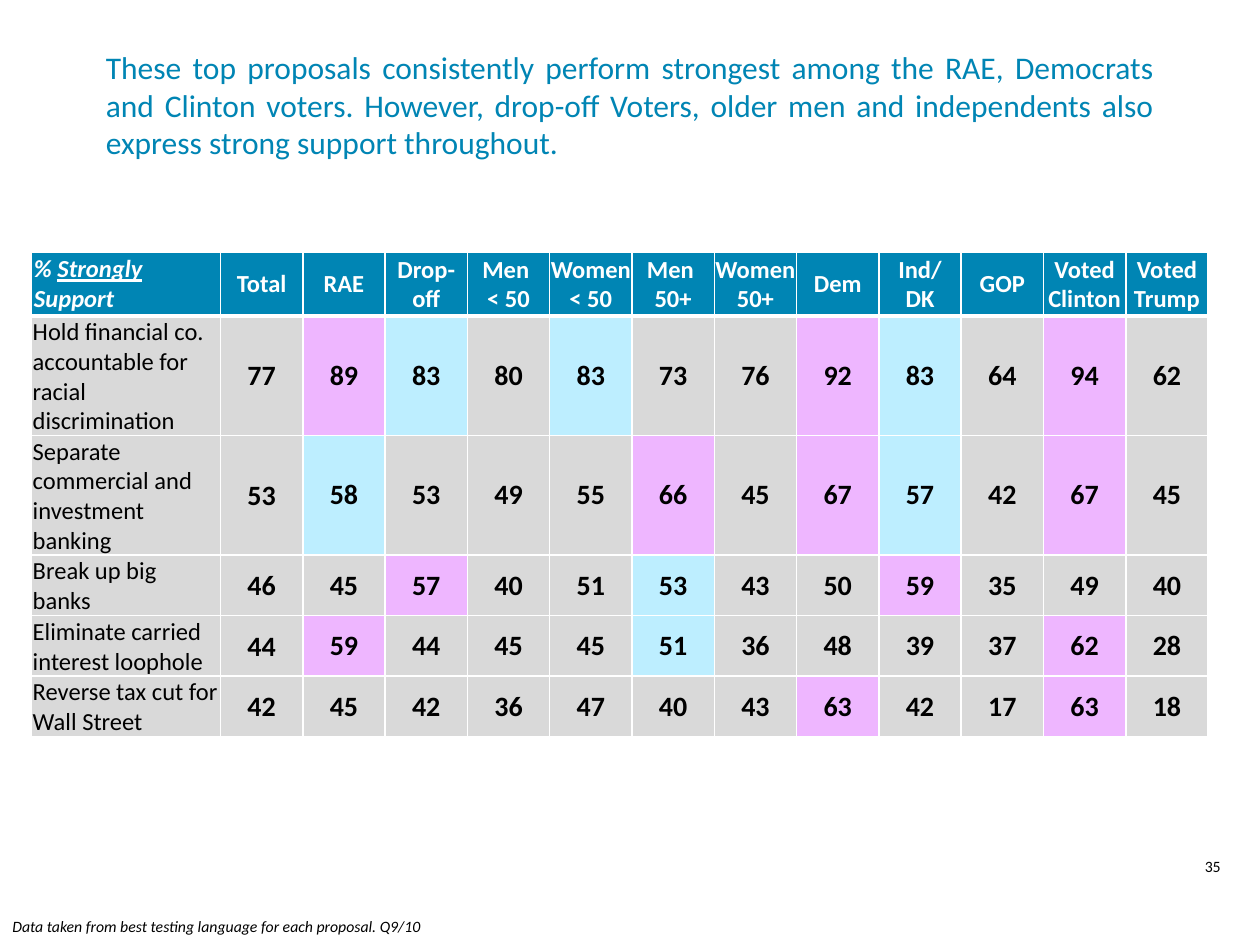
from dataclasses import dataclass

from lxml import etree
from pptx import Presentation
from pptx import util as u
from pptx.dml.color import RGBColor
from pptx.enum import text as t
from pptx.oxml import ns


@dataclass(frozen=True)
class Theme:
    font: str = "Calibri"
    blue: str = "0085B4"
    white: str = "FFFFFF"
    black: str = "000000"
    gray: str = "D9D9D9"
    pink: str = "EEB6FF"
    sky: str = "BDEEFF"
    title: int = 18
    label: int = 14
    value: int = 16
    small: int = 9


THEME = Theme()
LEFT, MID, JUST = t.PP_ALIGN.LEFT, t.PP_ALIGN.CENTER, t.PP_ALIGN.JUSTIFY
TITLE = (
    "These top proposals consistently perform strongest among the RAE, "
    "Democrats and Clinton voters. However, drop-off Voters, older men and "
    "independents also express strong support throughout. "
)
HEADS = [
    "Total", "RAE", "Drop-off", "Men \n< 50", "Women \n< 50", "Men \n50+",
    "Women 50+", "Dem", "Ind/\nDK", "GOP", "Voted Clinton", "Voted Trump",
]
ROWS = [
    ("Hold financial co. accountable for racial discrimination", 0.95,
     "77 89p 83s 80 83s 73 76 92p 83s 64 94p 62"),
    ("Separate commercial and investment banking", 0.95,
     "53 58s 53 49 55 66p 45 67p 57s 42 67p 45"),
    ("Break up big banks", 0.48,
     "46 45 57p 40 51 53s 43 50 59p 35 49 40"),
    ("Eliminate carried interest loophole", 0.48,
     "44 59p 44 45 45 51s 36 48 39 37 62p 28"),
    ("Reverse tax cut for Wall Street", 0.48,
     "42 45 42 36 47 40 43 63p 42 17 63p 18"),
]
TINTS = {"p": THEME.pink, "s": THEME.sky}


def write(frame, words, size, color=THEME.black, align=LEFT,
          bold=False, italic=False, under=None):
    frame.word_wrap = True
    for i, line in enumerate(words.split("\n")):
        para = frame.paragraphs[0] if i == 0 else frame.add_paragraph()
        para.alignment = align
        parts = line.partition(under) if under else [line]
        for part in parts:
            run = para.add_run()
            run.text = part
            font = run.font
            font.name, font.size = THEME.font, u.Pt(size)
            font.bold, font.italic = bold, italic
            font.underline = True if part == under else None
            font.color.rgb = RGBColor.from_string(color)


def edge(cell, **widths):
    props = cell._tc.get_or_add_tcPr()
    for side in "LRTB":
        line = etree.SubElement(props, ns.qn(f"a:ln{side}"),
                                w=str(u.Pt(widths.get(side, 1))))
        fill = etree.SubElement(line, ns.qn("a:solidFill"))
        etree.SubElement(fill, ns.qn("a:srgbClr"), val=THEME.white)


def paint(cell, words, fill, pad, anchor=t.MSO_ANCHOR.MIDDLE,
          side=None, **fmt):
    cell.fill.solid()
    cell.fill.fore_color.rgb = RGBColor.from_string(fill)
    cell.vertical_anchor = anchor
    cell.margin_left = cell.margin_right = u.Inches(
        pad if side is None else side)
    cell.margin_top = u.Inches(pad)
    cell.margin_bottom = u.Inches(pad if pad > 0.01 else 0)
    write(cell.text_frame, words, **fmt)


def add_head(slide, box):
    head = slide.shapes.title
    head.left, head.top, head.width, head.height = map(u.Inches, box)
    frame = head.text_frame
    frame.auto_size = t.MSO_AUTO_SIZE.NONE
    frame.vertical_anchor = t.MSO_ANCHOR.MIDDLE
    write(frame, TITLE, THEME.title, THEME.blue, JUST)


def add_grid(slide, box, first=1.5, top=0.5):
    count = len(HEADS)
    grid = slide.shapes.add_table(
        len(ROWS) + 1, count + 1, *map(u.Inches, box)).table
    grid.columns[0].width = u.Inches(first)
    for col in range(1, count + 1):
        grid.columns[col].width = u.Inches((box[2] - first) / count)
    for row, high in enumerate([top] + [item[1] for item in ROWS]):
        grid.rows[row].height = u.Inches(high)
        for cell in grid.rows[row].cells:
            edge(cell, B=3 if row == 0 else 1, T=3 if row == 1 else 1)

    style = dict(size=THEME.label, color=THEME.white, bold=True)
    paint(grid.cell(0, 0), "% Strongly Support", THEME.blue, 0.02,
          t.MSO_ANCHOR.BOTTOM, italic=True, under="Strongly", **style)
    for col, name in enumerate(HEADS, 1):
        paint(grid.cell(0, col), name, THEME.blue,
              0.02 if col == 1 else 0.01, side=0, align=MID, **style)

    for row, (label, _, marks) in enumerate(ROWS, 1):
        paint(grid.cell(row, 0), label, THEME.gray, 0.01, size=THEME.label)
        for col, mark in enumerate(marks.split(), 1):
            paint(grid.cell(row, col), mark.rstrip("ps"),
                  TINTS.get(mark[-1], THEME.gray),
                  0.01 if col == 1 else 0.02,
                  size=THEME.value, bold=True, align=MID)


def add_note(slide, box, words, **fmt):
    note = slide.shapes.add_textbox(*map(u.Inches, box))
    write(note.text_frame, words, THEME.small, **fmt)


def main():
    deck = Presentation()
    deck.slide_width, deck.slide_height = u.Inches(10), u.Inches(7.5)
    slide = deck.slides.add_slide(deck.slide_layouts[5])
    add_head(slide, (0.74, 0.25, 8.52, 1.16))
    add_note(slide, (9.25, 6.75, 0.75, 0.33), "35", align=MID)
    add_grid(slide, (0.25, 2, 9.34, 3.84))
    add_note(slide, (0, 7.23, 7.33, 0.25),
             "Data taken from best testing language for each proposal. Q9/10 ",
             align=JUST, italic=True)
    deck.save("out.pptx")


if __name__ == "__main__":
    main()
